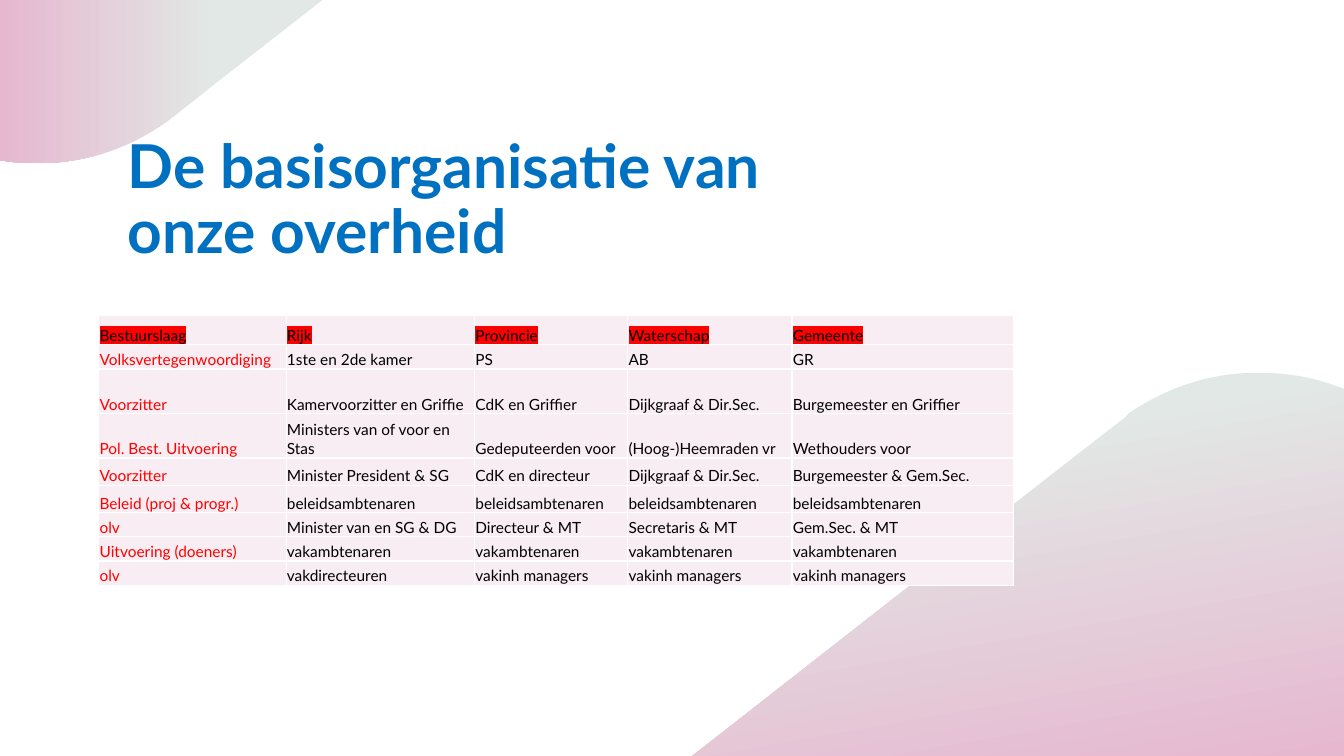
import pptx
import pptx.dml.color
import pptx.enum.text
import pptx.oxml.ns
import pptx.util
from lxml import etree

Cm = pptx.util.Cm
Pt = pptx.util.Pt
RGBColor = pptx.dml.color.RGBColor
qn = pptx.oxml.ns.qn

FONT = "Lato"
BLUE = RGBColor(0x00, 0x70, 0xC0)
RED = RGBColor(0xFF, 0x00, 0x00)
BLACK = RGBColor(0x00, 0x00, 0x00)
WHITE = RGBColor(0xFF, 0xFF, 0xFF)
BLUSH = RGBColor(0xF7, 0xED, 0xF2)
MIST = RGBColor(0xE2, 0xE8, 0xE5)
PINK = RGBColor(0xE6, 0xB8, 0xD0)

# Outlines in cm: one point is a line, three points are a Bézier curve.
LOWER_WAVE = [
    [(31.83, 9.4)],
    [(32.44, 9.4), (33.02, 9.5), (33.6, 9.7)],
    [(33.87, 9.8)],
    [(33.87, 19.05)],
    [(17.45, 19.05)],
    [(28.35, 10.52)],
    [(28.45, 10.41)],
    [(29.39, 9.78), (30.43, 9.42), (31.5, 9.4)],
    [(31.6, 9.4), (31.7, 9.38), (31.83, 9.4)],
]
UPPER_WAVE = [
    [(0, 0)],
    [(8.13, 0)],
    [(4.32, 2.97)],
    [(4.19, 3.07)],
    [(3.28, 3.71), (2.24, 4.07), (1.17, 4.11)],
    [(1.07, 4.11), (0.94, 4.11), (0.84, 4.11)],
    [(0.69, 4.11), (0.53, 4.09), (0.38, 4.09)],
    [(0, 4.04)],
]

COLUMN_WIDTHS = [4.72, 4.75, 3.86, 4.14, 5.59]
ROW_HEIGHTS = [0.74, 0.61, 1.12, 1.12, 0.69, 0.69, 0.61, 0.61, 0.61]
ROWS = [
    ["Bestuurslaag", "Rijk", "Provincie", "Waterschap", "Gemeente"],
    ["Volksvertegenwoordiging", "1ste en 2de kamer", "PS", "AB", "GR"],
    ["Voorzitter", "Kamervoorzitter en Griffie", "CdK en Griffier",
     "Dijkgraaf & Dir.Sec.", "Burgemeester en Griffier"],
    ["Pol. Best. Uitvoering", "Ministers van of voor en Stas", "Gedeputeerden voor",
     "(Hoog-)Heemraden vr", "Wethouders voor"],
    ["Voorzitter", "Minister President & SG", "CdK en directeur",
     "Dijkgraaf & Dir.Sec.", "Burgemeester & Gem.Sec."],
    ["Beleid (proj & progr.)"] + ["beleidsambtenaren"] * 4,
    ["olv", "Minister van en SG & DG", "Directeur & MT", "Secretaris & MT", "Gem.Sec. & MT"],
    ["Uitvoering (doeners)"] + ["vakambtenaren"] * 4,
    ["olv", "vakdirecteuren"] + ["vakinh managers"] * 3,
]


def curve_points(start, first, second, end, steps=16):
    """Sample a cubic Bézier curve, leaving out its start point."""
    for step in range(1, steps + 1):
        t = step / steps
        weights = ((1 - t) ** 3, 3 * t * (1 - t) ** 2, 3 * t * t * (1 - t), t ** 3)
        yield tuple(
            sum(weight * point[axis] for weight, point in zip(weights, (start, first, second, end)))
            for axis in (0, 1)
        )


def add_wave(page, outline, mist_until, angle):
    """Draw an outline that fades from mist to pink; angle is counter-clockwise."""
    points = []
    for segment in outline:
        points.extend(segment if len(segment) == 1 else curve_points(points[-1], *segment))
    corners = [(Cm(x), Cm(y)) for x, y in points]
    builder = page.shapes.build_freeform(*corners[0])
    builder.add_line_segments(corners[1:], close=True)
    wave = builder.convert_to_shape()
    wave.shadow.inherit = False
    wave.line.fill.background()
    wave.fill.gradient()
    wave.fill.gradient_angle = angle
    for stop, position, color in zip(wave.fill.gradient_stops, (mist_until, 1), (MIST, PINK)):
        stop.position = position
        stop.color.rgb = color


def add_run(para, text, size, color, bold=False):
    span = para.add_run()
    span.text = text
    span.font.name = FONT
    span.font.size = Pt(size)
    span.font.bold = bold
    span.font.color.rgb = color
    return span


def add_title(page, text):
    box = page.shapes.add_textbox(Cm(2.97), Cm(3.28), Cm(17.93), Cm(3.56))
    frame = box.text_frame
    frame.word_wrap = True
    frame.vertical_anchor = pptx.enum.text.MSO_ANCHOR.BOTTOM
    para = frame.paragraphs[0]
    para.line_spacing = 0.9
    add_run(para, text, 43.2, BLUE, bold=True)


def highlight(span, color):
    mark = etree.Element(qn("a:highlight"))
    etree.SubElement(mark, qn("a:srgbClr"), val=str(color))
    span.font.fill  # the text colour must precede the highlight
    span.font._element.find(qn("a:solidFill")).addnext(mark)


def add_borders(cell, color):
    properties = cell._tc.get_or_add_tcPr()
    for side in ("lnL", "lnR", "lnT", "lnB"):
        line = etree.SubElement(properties, qn("a:" + side), w=str(Pt(1)))
        fill = etree.SubElement(line, qn("a:solidFill"))
        etree.SubElement(fill, qn("a:srgbClr"), val=str(color))


def fill_cell(cell, text, color):
    add_borders(cell, WHITE)
    cell.fill.solid()
    cell.fill.fore_color.rgb = BLUSH
    cell.vertical_anchor = pptx.enum.text.MSO_ANCHOR.BOTTOM
    cell.margin_left = cell.margin_right = cell.margin_top = Cm(0.02)
    cell.margin_bottom = 0
    return add_run(cell.text_frame.paragraphs[0], text, 11, color)


def add_government_table(page):
    table = page.shapes.add_table(
        len(ROWS), len(COLUMN_WIDTHS), Cm(2.49), Cm(7.95),
        Cm(sum(COLUMN_WIDTHS)), Cm(sum(ROW_HEIGHTS)),
    ).table
    table.first_row = table.horz_banding = False
    for column, width in zip(table.columns, COLUMN_WIDTHS):
        column.width = Cm(width)
    for row, height in zip(table.rows, ROW_HEIGHTS):
        row.height = Cm(height)
    for row_index, texts in enumerate(ROWS):
        for column_index, text in enumerate(texts):
            is_header = row_index == 0
            color = RED if column_index == 0 and not is_header else BLACK
            span = fill_cell(table.cell(row_index, column_index), text, color)
            if is_header:
                highlight(span, RED)


def main():
    deck = pptx.Presentation()
    deck.slide_width, deck.slide_height = Cm(33.87), Cm(19.05)
    page = deck.slides.add_slide(deck.slide_layouts[6])
    add_wave(page, LOWER_WAVE, mist_until=0.23, angle=280)
    add_wave(page, UPPER_WAVE, mist_until=0.33, angle=180)
    add_title(page, "De basisorganisatie van onze overheid")
    add_government_table(page)
    deck.save("out.pptx")


if __name__ == "__main__":
    main()
